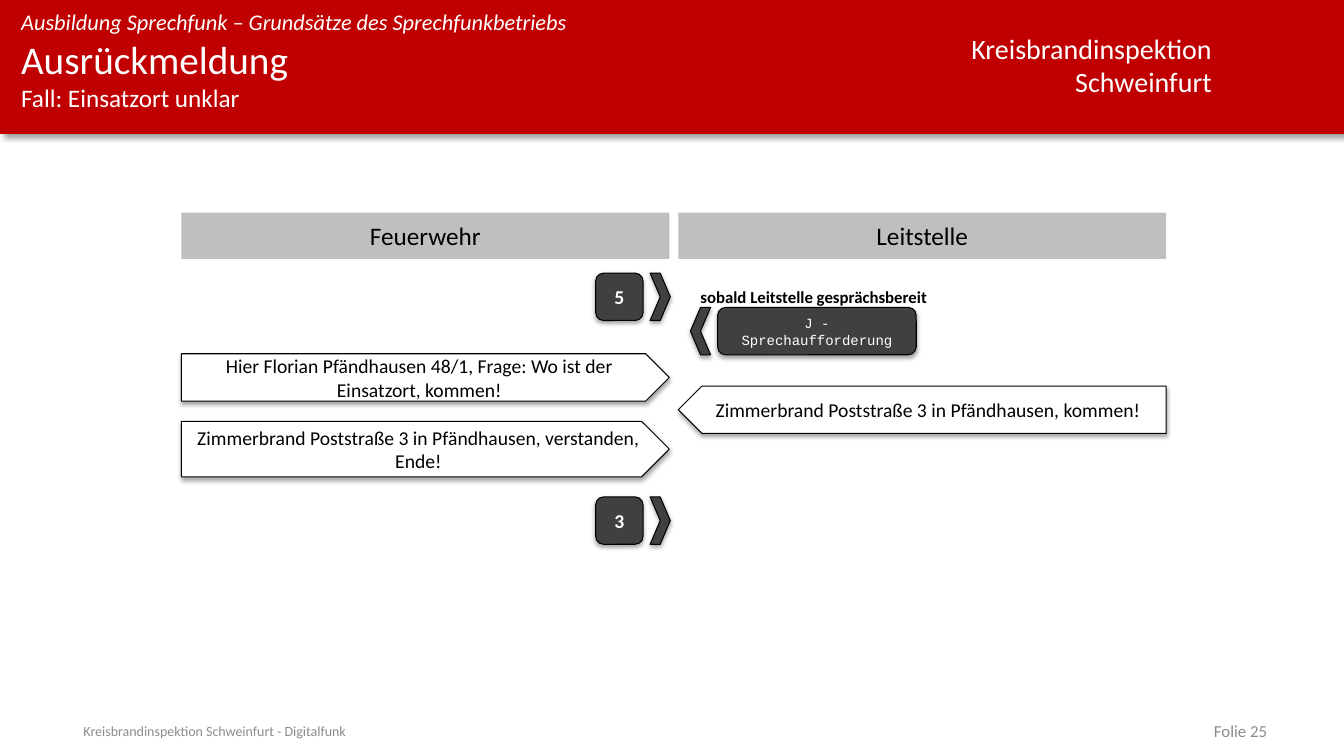
from pptx import Presentation
from pptx.dml.color import RGBColor
from pptx.enum.shapes import MSO_SHAPE
from pptx.enum.text import MSO_ANCHOR, PP_ALIGN
from pptx.oxml import parse_xml
from pptx.oxml.ns import nsdecls, qn
from pptx.util import Inches, Pt

RECT, ROUNDED = MSO_SHAPE.RECTANGLE, MSO_SHAPE.ROUNDED_RECTANGLE
ARROW, CHEVRON = MSO_SHAPE.PENTAGON, MSO_SHAPE.CHEVRON
LEFT, CENTER, RIGHT = PP_ALIGN.LEFT, PP_ALIGN.CENTER, PP_ALIGN.RIGHT
TOP, MIDDLE = MSO_ANCHOR.TOP, MSO_ANCHOR.MIDDLE

RED, GREY, DARK = "C00000", "BFBFBF", "404040"
WHITE, BLACK, MUTED = "FFFFFF", "000000", "8C8C8C"
CELL = 0.1
LANE_WIDTH, LANE_STEP, LANE_LEFT = 48.4, 49.3, 18
KEY, POINTER = 4.7, 2
SOFT_SHADOW = (35, 3.1, 1.8, 90)
BAR_SHADOW = (40, 4, 3, 45)


def color(hex_string):
    """Turn a hex string into a colour."""
    return RGBColor.from_string(hex_string)


def grid(*cells):
    """Turn grid cells into slide lengths."""
    return [Inches(cell * CELL) for cell in cells]


class RadioSlide:
    """Holds the style and the current slide of the radio training."""

    def __init__(self, deck):
        """Add a blank slide to the deck."""
        self.shapes = deck.slides.add_slide(deck.slide_layouts[6]).shapes

    def label(self, shape, lines, size, ink, align=CENTER, anchor=MIDDLE,
              inset=None, wrap=True, font="Calibri", bold=False, italic=False):
        """Put one paragraph per line into a shape."""
        frame = shape.text_frame
        frame.word_wrap = wrap
        frame.vertical_anchor = anchor
        if inset is not None:
            frame.margin_left = frame.margin_right = Inches(inset)
            frame.margin_top = frame.margin_bottom = Inches(inset)
        for number, line in enumerate(lines):
            paragraph = frame.add_paragraph() if number else frame.paragraphs[0]
            paragraph.alignment = align
            self.add_words(paragraph, line, size, ink, font, bold, italic)
        return frame.paragraphs[0]

    def add_words(self, paragraph, wording, size, ink, font="Calibri", bold=False, italic=False):
        """Add one styled run to a paragraph."""
        words = paragraph.add_run()
        words.text = wording
        words.font.name, words.font.size = font, Pt(size)
        words.font.bold, words.font.italic = bold, italic
        words.font.color.rgb = color(ink)

    def text(self, box, *lines, **style):
        """Add a text box."""
        return self.label(self.shapes.add_textbox(*grid(*box)), lines, **style)

    def block(self, box, kind, fill, outlined=False, shadow=None, mirrored=False, parent=None):
        """Add a filled shape."""
        shape = (parent or self.shapes).add_shape(kind, *grid(*box))
        shape.shadow.inherit = False
        shape.fill.solid()
        shape.fill.fore_color.rgb = color(fill)
        if outlined:
            shape.line.color.rgb = color(BLACK)
            shape.line.width = Pt(0.75)
        else:
            shape.line.fill.background()
        properties = shape._element.spPr
        if mirrored:
            properties.find(qn("a:xfrm")).set("flipH", "1")
        if shadow:
            alpha, blur, distance, angle = shadow
            properties.find(qn("a:effectLst")).append(parse_xml(
                f'<a:outerShdw {nsdecls("a")} blurRad="{Pt(blur)}" dist="{Pt(distance)}" '
                f'dir="{angle * 60000}" algn="ctr" rotWithShape="0"><a:srgbClr val="{BLACK}">'
                f'<a:alpha val="{alpha * 1000}"/></a:srgbClr></a:outerShdw>'))
        return shape

    def raised(self, box, kind, fill, **options):
        """Add an outlined shape with a soft shadow."""
        return self.block(box, kind, fill, outlined=True, shadow=SOFT_SHADOW, **options)

    def lane_header(self, lane, speaker):
        """Head a speaker's lane."""
        header = self.block((LANE_LEFT + lane * LANE_STEP, 21.1, LANE_WIDTH, 4.6), RECT, GREY)
        self.label(header, [speaker], 18, BLACK, anchor=TOP, inset=0.08, wrap=False)

    def message(self, lane, row, wording, height=KEY):
        """Add a spoken message pointing to the other lane."""
        box = (LANE_LEFT + lane * LANE_STEP, row, LANE_WIDTH, height)
        self.label(self.raised(box, ARROW, WHITE, mirrored=lane == 1), [wording], 14, BLACK)

    def status_key(self, row, digit):
        """Add a grouped status key with its pointer."""
        group = self.shapes.add_group_shape().shapes
        key = self.raised((59.1, row, KEY, KEY), ROUNDED, DARK, parent=group)
        self.label(key, [digit], 14, WHITE, bold=True)
        self.raised((64.5, row, POINTER, KEY), CHEVRON, DARK, parent=group)

    def reply_key(self, row, wording):
        """Add the control centre's status reply with its pointer."""
        self.raised((68.5, row, POINTER, KEY), CHEVRON, DARK, mirrored=True)
        reply = self.raised((71.2, row, 19.7, KEY), ROUNDED, DARK)
        self.label(reply, [wording], 10, WHITE, font="Courier New")


def main():
    """Build the slide and save it."""
    deck = Presentation()
    deck.slide_width, deck.slide_height = grid(133.33, 75)
    slide = RadioSlide(deck)

    slide.block((0, 0, 133.33, 13.3), RECT, RED, shadow=BAR_SHADOW)
    slide.text((95.1, 2.6, 26.1, 7.7), "Kreisbrandinspektion", "Schweinfurt",
               size=20, ink=WHITE, align=RIGHT, anchor=TOP, wrap=False)
    slide.text((2.1, 0.8, 84.3, 2.7), "Ausbildung Sprechfunk – Grundsätze des Sprechfunkbetriebs",
               size=16, ink=WHITE, align=LEFT, anchor=TOP, inset=0, italic=True)
    title = slide.text((2.1, 3.5, 84.3, 9.9), "Ausrückmeldung",
                       size=28, ink=WHITE, align=LEFT, anchor=TOP, inset=0)
    title.add_line_break()
    slide.add_words(title, "Fall: Einsatzort unklar", 18, WHITE)

    slide.text((7.3, 71.5, 80.5, 2), "Kreisbrandinspektion Schweinfurt - Digitalfunk",
               size=10, ink=MUTED, align=LEFT)
    slide.text((95.6, 71.5, 31.1, 2), "Folie 25", size=12, ink=MUTED, align=RIGHT)

    for lane, speaker in enumerate(("Feuerwehr", "Leitstelle")):
        slide.lane_header(lane, speaker)
    slide.status_key(27.1, "5")
    slide.reply_key(30.5, "J - Sprechaufforderung")
    slide.message(0, 35.1, "Hier Florian Pfändhausen 48/1, Frage: Wo ist der Einsatzort, kommen!")
    slide.status_key(49.3, "3")
    slide.text((68.5, 28, 25.2, 3), "sobald Leitstelle gesprächsbereit",
               size=12, ink=BLACK, align=LEFT, anchor=TOP, wrap=False, bold=True)
    slide.message(1, 38.3, "Zimmerbrand Poststraße 3 in Pfändhausen, kommen!")
    slide.message(0, 41.8, "Zimmerbrand Poststraße 3 in Pfändhausen, verstanden, Ende!", 5.5)

    deck.save("out.pptx")


if __name__ == "__main__":
    main()
